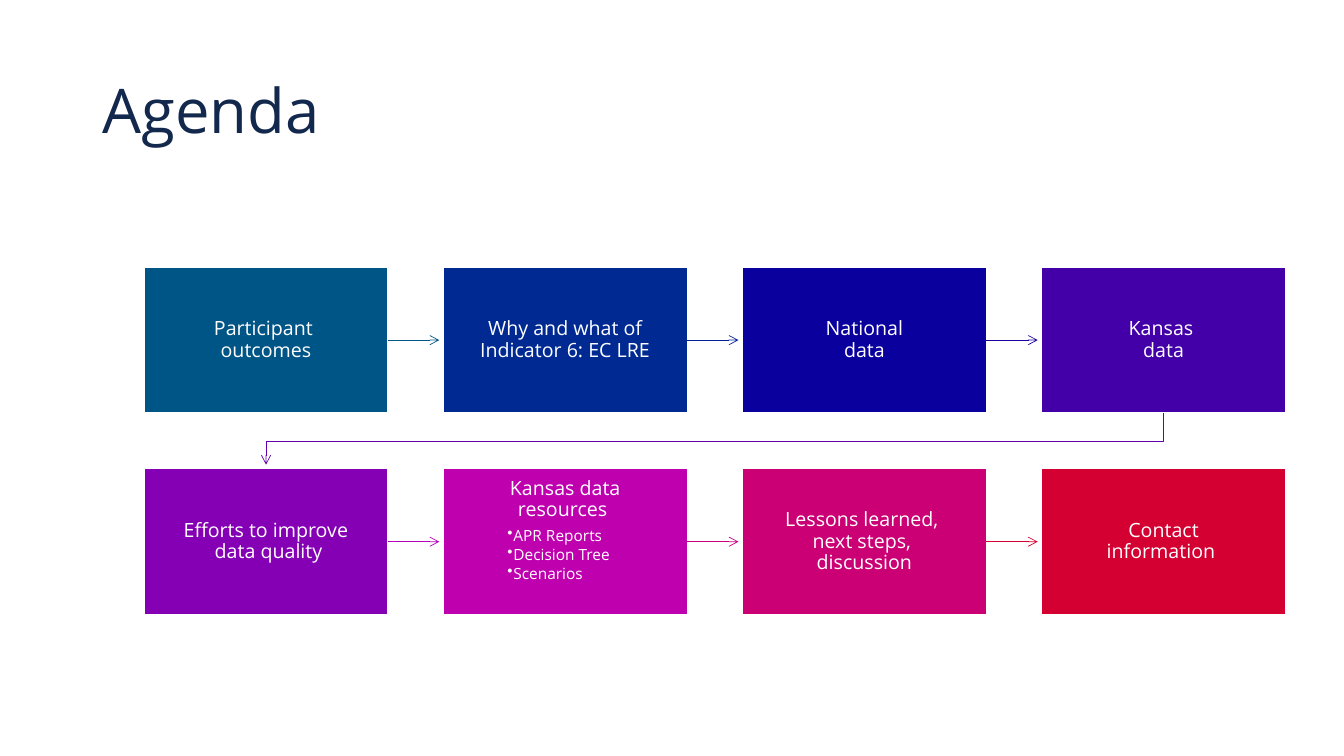
"""Build the Agenda slide: eight topics in two rows, linked by arrows."""
import pptx
import pptx.util
import pptx.dml.color
import pptx.enum.shapes
import pptx.enum.text
import pptx.oxml.ns
import lxml.etree

Cm, Pt = pptx.util.Cm, pptx.util.Pt
RGBColor = pptx.dml.color.RGBColor
ALIGN, ANCHOR = pptx.enum.text.PP_ALIGN, pptx.enum.text.MSO_ANCHOR
qn = pptx.oxml.ns.qn

NAVY = RGBColor(0x12, 0x28, 0x4C)
WHITE = RGBColor(0xFF, 0xFF, 0xFF)
FONT = "Open Sans"
COLUMNS = 4
LEFT, TOP, WIDTH, HEIGHT = Cm(3.63), Cm(6.73), Cm(6.15), Cm(3.68)
COLUMN_STEP, ROW_STEP, ARROW_GAP = Cm(7.54), Cm(5.08), Cm(0.1)

TOPICS = [
    ("Participant \noutcomes", RGBColor(0x00, 0x55, 0x87), RGBColor(0x00, 0x55, 0x87)),
    ("Why and what of Indicator 6: EC LRE", RGBColor(0x00, 0x2A, 0x92), RGBColor(0x00, 0x22, 0x94)),
    ("National\ndata", RGBColor(0x09, 0x00, 0x9D), RGBColor(0x1B, 0x00, 0xA1)),
    ("Kansas \ndata", RGBColor(0x43, 0x00, 0xA8), RGBColor(0x63, 0x00, 0xAE)),
    ("Efforts to improve\n data quality", RGBColor(0x85, 0x00, 0xB4), RGBColor(0xB5, 0x00, 0xBB)),
    ("Kansas data resources ", RGBColor(0xBF, 0x00, 0xAF), RGBColor(0xC8, 0x00, 0x7F)),
    ("Lessons learned, \nnext steps, \ndiscussion", RGBColor(0xCA, 0x00, 0x74), RGBColor(0xD5, 0x00, 0x32)),
    ("Contact\ninformation ", RGBColor(0xD5, 0x00, 0x32), None),
]
RESOURCES = ["APR Reports", "Decision Tree", "Scenarios"]


def write(paragraph, text, size, color, space_after=0):
    paragraph.line_spacing = 0.9
    paragraph.space_after = Pt(space_after)
    for number, line in enumerate(text.split("\n")):
        if number:
            paragraph.add_line_break()
        run = paragraph.add_run()
        run.text = line
        run.font.name = FONT
        run.font.size = Pt(size)
        run.font.color.rgb = color


def style_arrow(arrow, color):
    arrow.line.color.rgb = color
    arrow.line.width = Pt(0.5)
    line = arrow.line._get_or_add_ln()
    lxml.etree.SubElement(line, qn("a:tailEnd"), type="arrow")


presentation = pptx.Presentation()
presentation.slide_width = Cm(33.87)
presentation.slide_height = Cm(19.05)
slide = presentation.slides.add_slide(presentation.slide_layouts[5])

title = slide.shapes.title
title.left, title.top, title.width, title.height = Cm(2.33), Cm(1.01), Cm(29.21), Cm(3.68)
title.text_frame.vertical_anchor = ANCHOR.MIDDLE
heading = title.text_frame.paragraphs[0]
heading.alignment = ALIGN.LEFT
write(heading, "Agenda", 44, NAVY)

topic_boxes = []
for index, (text, fill, arrow_color) in enumerate(TOPICS):
    row, column = divmod(index, COLUMNS)
    box = slide.shapes.add_shape(
        pptx.enum.shapes.MSO_SHAPE.RECTANGLE,
        LEFT + column * COLUMN_STEP, TOP + row * ROW_STEP, WIDTH, HEIGHT)
    box.shadow.inherit = False
    box.fill.solid()
    box.fill.fore_color.rgb = fill
    box.line.color.rgb = WHITE
    box.line.width = Pt(1)
    topic_boxes.append(box)

    frame = box.text_frame
    frame.word_wrap = True
    frame.vertical_anchor = ANCHOR.MIDDLE
    frame.margin_left = frame.margin_right = Cm(0.28)
    frame.margin_top = frame.margin_bottom = Cm(0.28)
    frame.paragraphs[0].alignment = ALIGN.CENTER
    write(frame.paragraphs[0], text, 14, WHITE, 4.9)

    if column < COLUMNS - 1:
        middle = box.top + HEIGHT // 2
        arrow = slide.shapes.add_connector(
            pptx.enum.shapes.MSO_CONNECTOR.STRAIGHT,
            box.left + WIDTH, middle, box.left + COLUMN_STEP - ARROW_GAP, middle)
        arrow.begin_connect(box, 3)
        style_arrow(arrow, arrow_color)
        lxml.etree.SubElement(arrow._element.spPr, qn("a:effectLst"))

resources_frame = topic_boxes[5].text_frame
resources_frame.vertical_anchor = ANCHOR.TOP
resources_frame.margin_left = resources_frame.margin_right = Cm(0.5)
resources_frame.margin_top = resources_frame.margin_bottom = Cm(0.25)
for resource in RESOURCES:
    item = resources_frame.add_paragraph()
    item.level = 1
    item.alignment = ALIGN.LEFT
    properties = item._p.get_or_add_pPr()
    properties.set("marL", str(Cm(1.27)))
    properties.set("indent", str(Cm(-0.15)))
    lxml.etree.SubElement(properties, qn("a:buChar"), char="•")
    write(item, resource, 11, WHITE, 1.65)

row_end, row_start = topic_boxes[COLUMNS - 1], topic_boxes[COLUMNS]
end_x, start_x = row_end.left + WIDTH // 2, row_start.left + WIDTH // 2
turn_y = row_end.top + HEIGHT + (ROW_STEP - HEIGHT) // 2
route = slide.shapes.build_freeform(end_x, row_end.top + HEIGHT)
route.add_line_segments(
    [(end_x, turn_y), (start_x, turn_y), (start_x, row_start.top - ARROW_GAP)], close=False)
row_arrow = route.convert_to_shape()
row_arrow.shadow.inherit = False
row_arrow.fill.background()
style_arrow(row_arrow, TOPICS[COLUMNS - 1][2])

presentation.save("out.pptx")
